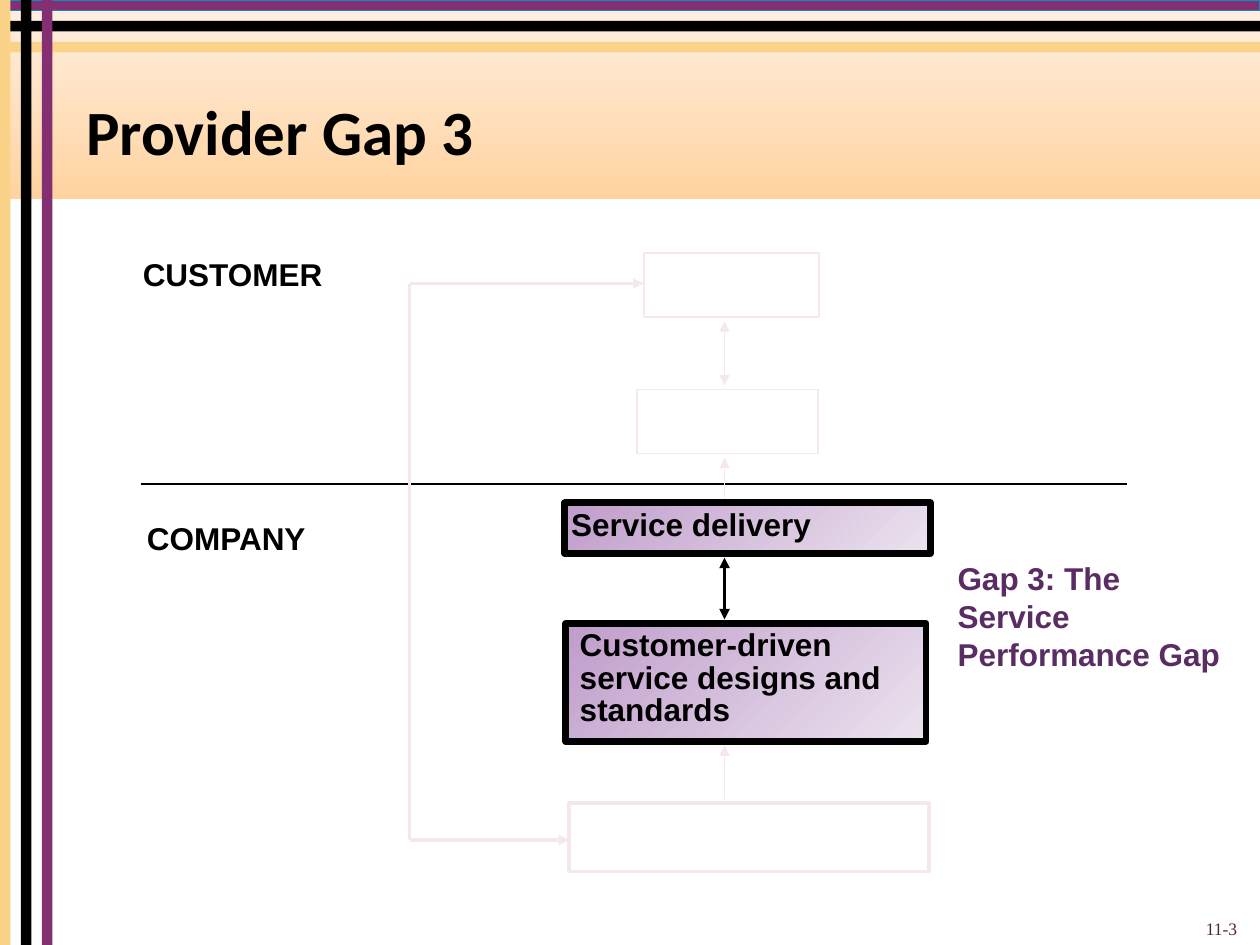
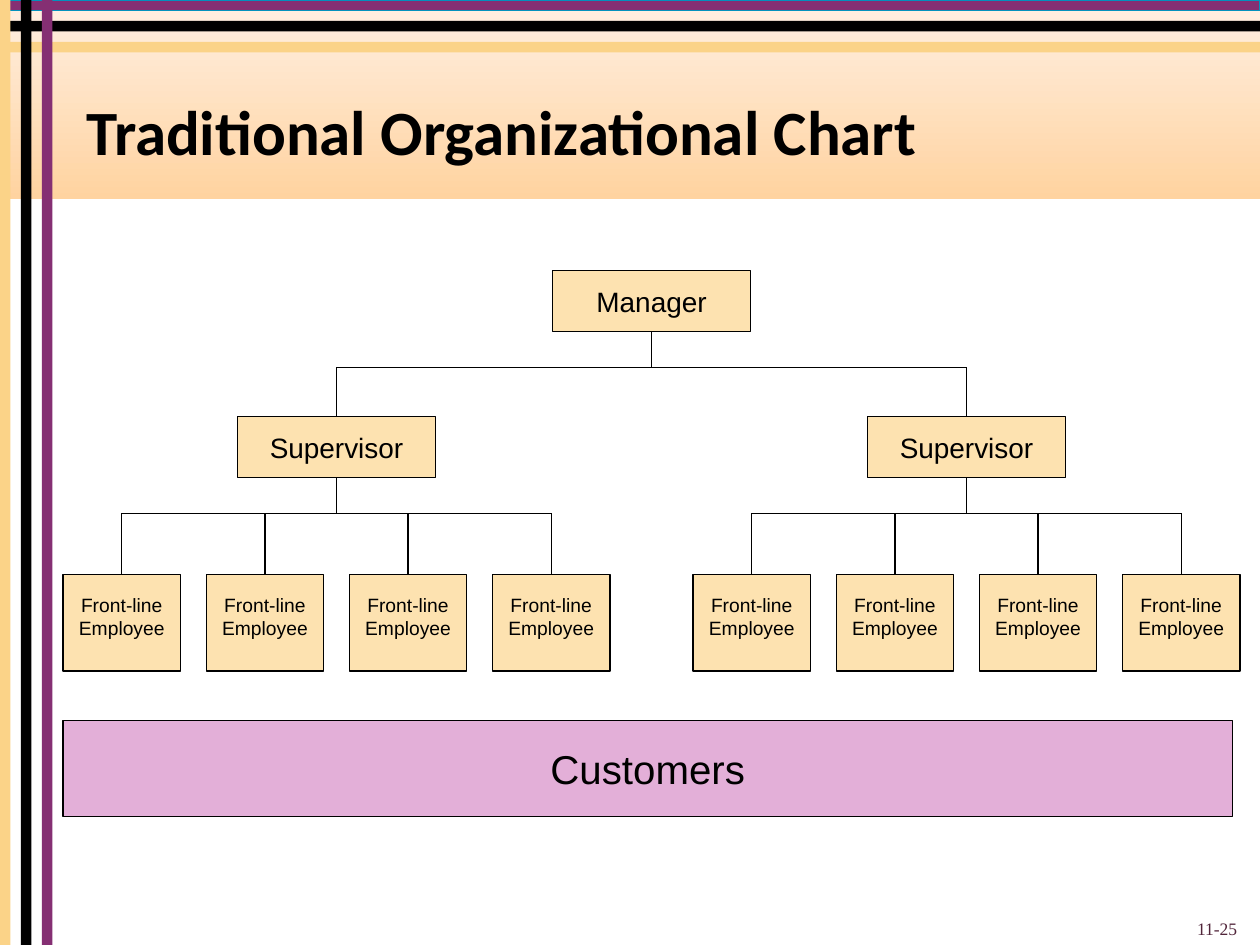
from dataclasses import dataclass
from itertools import pairwise

from lxml import etree
from pptx import Presentation
from pptx.dml.color import RGBColor
from pptx.enum.shapes import MSO_CONNECTOR, MSO_SHAPE
from pptx.enum.text import MSO_ANCHOR, MSO_AUTO_SIZE, PP_ALIGN
from pptx.oxml.ns import qn
from pptx.util import Inches, Pt

RECTANGLE = MSO_SHAPE.RECTANGLE
STRAIGHT = MSO_CONNECTOR.STRAIGHT
TOP, MIDDLE, BOTTOM = MSO_ANCHOR.TOP, MSO_ANCHOR.MIDDLE, MSO_ANCHOR.BOTTOM
LEFT, CENTER, RIGHT = PP_ALIGN.LEFT, PP_ALIGN.CENTER, PP_ALIGN.RIGHT
FIXED_SIZE = MSO_AUTO_SIZE.NONE

COLUMNS, ROWS = 120, 90
CELLS_PER_INCH = 12
TITLE_ONLY = 5


@dataclass(frozen=True)
class Theme:
    black: str = "000000"
    white: str = "FFFFFF"
    purple: str = "852F73"
    yellow: str = "FBD388"
    teal: str = "0391BD"
    faded: str = "F4E7ED"
    gap_label: str = "5A2C64"
    page_number: str = "51253A"
    staff: str = "FDE2B0"
    customers: str = "E3AFD8"
    header: tuple = ("FFD3A0", "FFF0E3")
    highlight: tuple = ("C09DCB", "EBE2EE")
    title_font: str = "Calibri"
    body_font: str = "Arial"
    number_font: str = "Times New Roman"
    title_size: int = 36
    customers_size: int = 23
    label_size: int = 18
    role_size: int = 16
    employee_size: int = 11
    number_size: int = 10


THEME = Theme()


def cells(count):
    return Inches(count / CELLS_PER_INCH)


@dataclass(frozen=True)
class Box:
    """A rectangle measured in grid cells of the slide."""
    left: float
    top: float
    width: float
    height: float

    @property
    def right(self):
        return self.left + self.width

    @property
    def bottom(self):
        return self.top + self.height

    @property
    def center(self):
        return self.left + self.width / 2

    def inner(self, column, row, width, height):
        return Box(self.left + column, self.top + row, width, height)

    def point(self, column, row):
        return self.left + column, self.top + row

    def emu(self):
        return [cells(n) for n in (self.left, self.top, self.width, self.height)]


SLIDE = Box(0, 0, COLUMNS, ROWS)


def write(shape, text, size=THEME.label_size, font=THEME.body_font,
          color=THEME.black, bold=False, align=LEFT, anchor=TOP,
          insets=(0.05, 0.02), spacing=None, wrap=True):
    """Fill a shape with text; insets are the side and top margins in inches."""
    frame = shape.text_frame
    frame.text = text
    frame.word_wrap = wrap
    frame.auto_size = FIXED_SIZE
    frame.vertical_anchor = anchor
    side, edge = (Inches(inset) for inset in insets)
    frame.margin_left = frame.margin_right = side
    frame.margin_top = frame.margin_bottom = edge
    for paragraph in frame.paragraphs:
        paragraph.alignment = align
        paragraph.line_spacing = spacing
        for run in paragraph.runs:
            run.font.name = font
            run.font.size = Pt(size)
            run.font.bold = bold
            run.font.color.rgb = RGBColor.from_string(color)


def add_label(slide, box, text, **style):
    write(slide.shapes.add_textbox(*box.emu()), text, **style)


def add_panel(slide, box, fill, line=None, line_width=0.75, angle=0):
    """Draw a rectangle; a pair of colours as fill makes a gradient."""
    panel = slide.shapes.add_shape(RECTANGLE, *box.emu())
    panel.shadow.inherit = False
    if isinstance(fill, tuple):
        panel.fill.gradient()
        panel.fill.gradient_angle = angle
        for stop, color in zip(panel.fill.gradient_stops, fill):
            stop.color.rgb = RGBColor.from_string(color)
    else:
        panel.fill.solid()
        panel.fill.fore_color.rgb = RGBColor.from_string(fill)
    if line:
        panel.line.color.rgb = RGBColor.from_string(line)
        panel.line.width = Pt(line_width)
    else:
        panel.line.fill.background()
    return panel


def add_line(slide, start, end, color=THEME.black, width=0.75, arrows=()):
    """Join two grid points; arrows names the ends: headEnd, then tailEnd."""
    line = slide.shapes.add_connector(
        STRAIGHT, *(cells(n) for n in (*start, *end)))
    line.line.color.rgb = RGBColor.from_string(color)
    line.line.width = Pt(width)
    properties = line.element.spPr
    for arrow in arrows:
        etree.SubElement(properties.find(qn("a:ln")), qn(f"a:{arrow}"), type="triangle")
    etree.SubElement(properties, qn("a:effectLst"))


def add_bands(slide, layout):
    """Draw the header and crossing stripes, then move them to the layout."""
    bands = [add_panel(slide, SLIDE.inner(0, 0, COLUMNS, 19), THEME.header, angle=90),
             add_panel(slide, SLIDE.inner(0, 0, COLUMNS, 1), THEME.purple,
                       line=THEME.teal, line_width=0)]
    for row, color in ((4, THEME.yellow), (2, THEME.black)):
        bands.append(add_panel(slide, SLIDE.inner(0, row, COLUMNS, 1), color))
    for column, color in ((4, THEME.purple), (0, THEME.yellow), (2, THEME.black)):
        bands.append(add_panel(slide, SLIDE.inner(column, 0, 1, ROWS), color))
    for position, band in enumerate(bands, start=2):
        layout.shapes.element.insert(position, band.element)


def add_titled_slide(deck, title, number):
    slide = deck.slides.add_slide(deck.slide_layouts[TITLE_ONLY])
    heading = slide.shapes.title
    heading.left, heading.top, heading.width, heading.height = SLIDE.inner(7, 7, 111, 12).emu()
    write(heading, title, size=THEME.title_size, font=THEME.title_font, bold=True,
          anchor=MIDDLE, insets=(0.1, 0.05), spacing=0.85)
    add_label(slide, SLIDE.inner(91, 84, 28, 6), number, size=THEME.number_size,
              font=THEME.number_font, color=THEME.page_number, align=RIGHT,
              anchor=BOTTOM, insets=(0.1, 0.05))
    return slide


def add_gap_diagram(slide, area):
    """Stack the service steps on one axis, with the gap between two of them."""
    axis, feedback, clearance = area.left + 56, 26, 0.4
    add_line(slide, area.point(0.4, 22.1), area.point(94.3, 22.1), width=1)

    expected = area.inner(48.3, 0.1, 16.7, 6.1)
    perceived = area.inner(47.7, 13.1, 17.2, 6.1)
    delivery = area.inner(40.8, 23.9, 34.8, 4.8)
    designs = area.inner(40.9, 35.4, 34.3, 11.2)
    perceptions = area.inner(41.2, 52.5, 34.3, 6.5)
    for step, weight in ((expected, 1), (perceived, 1), (perceptions, 2)):
        add_panel(slide, step, THEME.white, line=THEME.faded, line_width=weight)
    for step, text, style in (
            (delivery, "Service delivery", {}),
            (designs, "Customer-driven\nservice designs and standards",
             {"insets": (0.11, 0.06), "spacing": 0.85})):
        panel = add_panel(slide, step, THEME.highlight, line=THEME.black,
                          line_width=4, angle=315)
        write(panel, text, bold=True, **style)

    up, both = ("headEnd",), ("headEnd", "tailEnd")
    steps = (expected, perceived, delivery, designs, perceptions)
    links = ((THEME.faded, 1, both), (THEME.faded, 1, up),
             (THEME.black, 2, both), (THEME.faded, 1, up))
    for (upper, lower), (color, width, arrows) in zip(pairwise(steps), links):
        add_line(slide, (axis, upper.bottom + clearance),
                 (axis, lower.top - clearance), color, width, arrows)

    add_line(slide, area.point(feedback, 3), area.point(feedback, 56), THEME.faded, 2)
    for row, step in ((3, expected), (56, perceptions)):
        add_line(slide, area.point(feedback, row), (step.left, area.top + row),
                 THEME.faded, 2, ("tailEnd",))

    add_label(slide, area.inner(0, 0, 19, 4.2), "CUSTOMER", bold=True, wrap=False)
    add_label(slide, area.inner(0.4, 25.2, 18, 4.2), "COMPANY", bold=True, wrap=False)
    add_label(slide, area.inner(77.6, 29, 27.4, 11.4), "Gap 3: The Service Performance Gap",
              color=THEME.gap_label, bold=True)


def add_role(slide, box, text, fill=THEME.staff, size=THEME.role_size, **style):
    panel = add_panel(slide, box, fill, line=THEME.black)
    write(panel, text, size=size, align=CENTER, **{"anchor": MIDDLE, **style})


def add_branches(slide, parent, children):
    """Connect a role to the roles below it through one horizontal line."""
    fork = parent.bottom + 3.4
    add_line(slide, (parent.center, parent.bottom), (parent.center, fork))
    add_line(slide, (children[0].center, fork), (children[-1].center, fork))
    for child in children:
        add_line(slide, (child.center, fork), (child.center, child.top))


def add_team(slide, area, role_width, role_height):
    """Draw a supervisor above four employees and return the supervisor's box."""
    team_size, desk_width, desk_height = 4, 11.2, 9.2
    pitch = (area.width - desk_width) / (team_size - 1)
    supervisor = area.inner((area.width - role_width) / 2, 0, role_width, role_height)
    desks = [area.inner(seat * pitch, area.height - desk_height, desk_width, desk_height)
             for seat in range(team_size)]
    add_branches(slide, supervisor, desks)
    add_role(slide, supervisor, "Supervisor")
    for desk in desks:
        add_role(slide, desk, "Front-line\nEmployee", size=THEME.employee_size,
                 anchor=TOP, insets=(0.05, 0.15))
    return supervisor


def add_organization(slide, area):
    role_width, role_height, team_width = 18.9, 5.8, 52.1
    manager = area.inner((area.width - role_width) / 2, 0, role_width, role_height)
    supervisors = [
        add_team(slide, area.inner(column, 13.9, team_width, 24.2), role_width, role_height)
        for column in (0, area.width - team_width)]
    add_branches(slide, manager, supervisors)
    add_role(slide, manager, "Manager")
    add_role(slide, area.inner(0, area.height - 9.2, 111.4, 9.2), "Customers",
             fill=THEME.customers, size=THEME.customers_size)


def main():
    deck = Presentation()
    deck.slide_width, deck.slide_height = cells(COLUMNS), cells(ROWS)

    gap = add_titled_slide(deck, "Provider Gap 3", "11-3")
    add_bands(gap, gap.slide_layout)
    add_gap_diagram(gap, SLIDE.inner(13, 24, 105, 59))

    organization = add_titled_slide(deck, "Traditional Organizational Chart", "11-25")
    add_organization(organization, SLIDE.inner(6, 25.8, 112.1, 52))

    deck.save("out.pptx")


if __name__ == "__main__":
    main()
